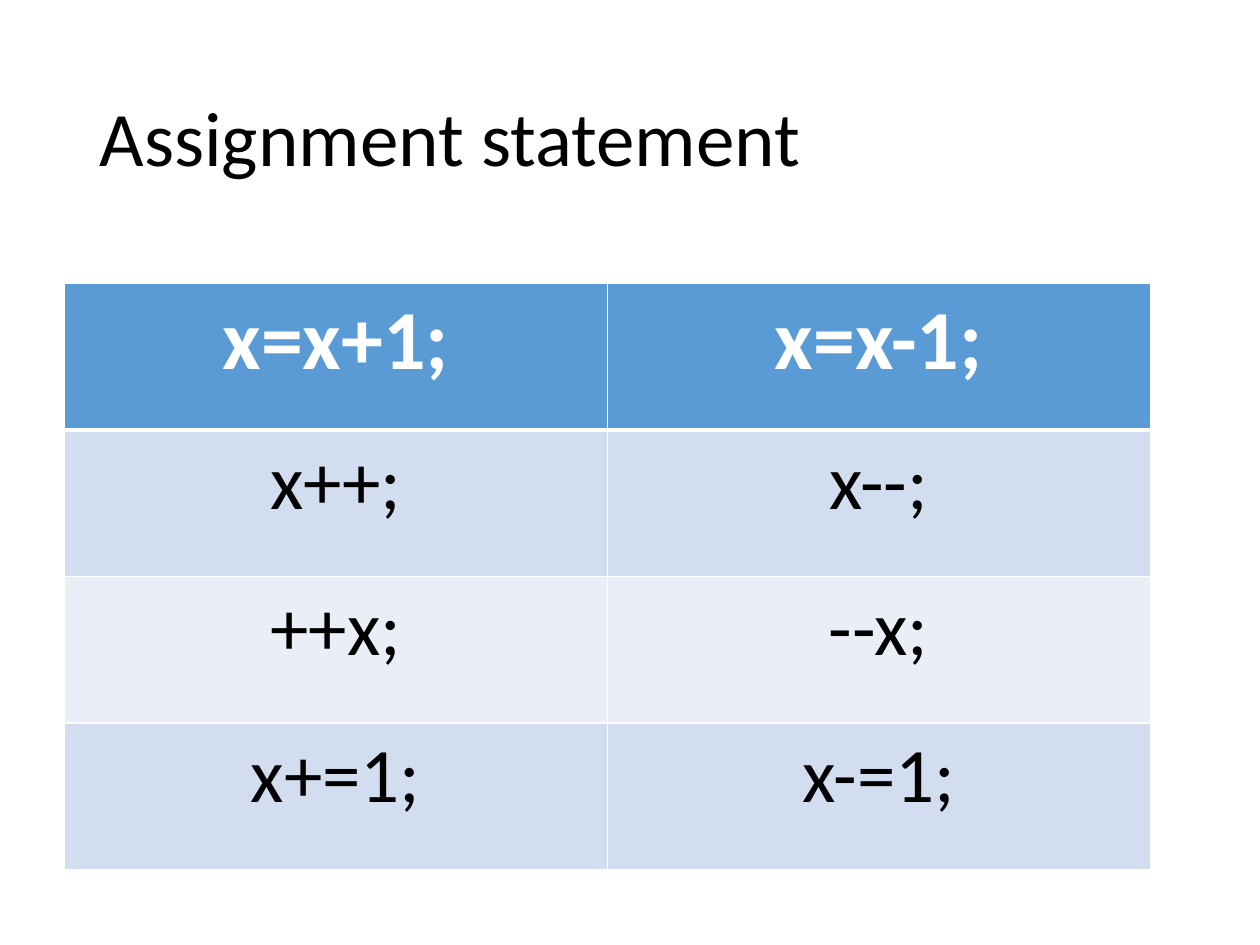
from lxml.etree import SubElement
from pptx import Presentation
from pptx.dml.color import RGBColor
from pptx.enum.text import MSO_ANCHOR, PP_ALIGN
from pptx.oxml.ns import qn
from pptx.util import Pt

PX = 9144
FONT = "Calibri"
COLORS = {
    "ink": "000000",
    "paper": "FFFFFF",
    "header": "5B9BD5",
    "odd": "D2DEEF",
    "even": "EAEFF7",
}
STATEMENTS = [
    ("x=x+1;", "x=x-1;"),
    ("x++;", "x--;"),
    ("++x;", "--x;"),
    ("x+=1;", "x-=1;"),
]


def emu(*lengths):
    return [length * PX for length in lengths]


def format_paragraph(paragraph, size, color, align, bold=False):
    paragraph.alignment = align
    for run in paragraph.runs:
        run.font.name = FONT
        run.font.size = Pt(size)
        run.font.bold = bold
        run.font.color.rgb = RGBColor.from_string(COLORS[color])


def add_borders(cell, top, bottom):
    properties = cell._tc.get_or_add_tcPr()
    for side, width in (("L", 1), ("R", 1), ("T", top), ("B", bottom)):
        line = SubElement(properties, qn(f"a:ln{side}"), w=str(Pt(width)))
        fill = SubElement(line, qn("a:solidFill"))
        SubElement(fill, qn("a:srgbClr"), val=COLORS["paper"])


def place_title(slide, left, top, width, height):
    title = slide.shapes.title
    title.left, title.top, title.width, title.height = emu(left, top, width, height)
    frame = title.text_frame
    frame.text = "Assignment statement"
    frame.vertical_anchor = MSO_ANCHOR.MIDDLE
    heading = frame.paragraphs[0]
    heading.line_spacing = 0.9
    format_paragraph(heading, 44, "ink", PP_ALIGN.LEFT)


def place_statements(slide, left, top, width, height):
    table = slide.shapes.add_table(
        len(STATEMENTS), len(STATEMENTS[0]), *emu(left, top, width, height)
    ).table
    for row, statements in enumerate(STATEMENTS):
        is_header = row == 0
        band = "header" if is_header else "odd" if row % 2 else "even"
        for column, statement in enumerate(statements):
            cell = table.cell(row, column)
            add_borders(cell, 3 if row == 1 else 1, 3 if is_header else 1)
            cell.fill.solid()
            cell.fill.fore_color.rgb = RGBColor.from_string(COLORS[band])
            cell.text_frame.text = statement
            format_paragraph(
                cell.text_frame.paragraphs[0],
                48 if is_header else 44,
                "paper" if is_header else "ink",
                PP_ALIGN.CENTER,
                is_header,
            )


def main():
    deck = Presentation()
    deck.slide_width, deck.slide_height = emu(1000, 750)
    slide = deck.slides.add_slide(deck.slide_layouts[5])
    place_title(slide, 69, 40, 862, 145)
    place_statements(slide, 51, 225, 862, 465)
    deck.save("out.pptx")


if __name__ == "__main__":
    main()
